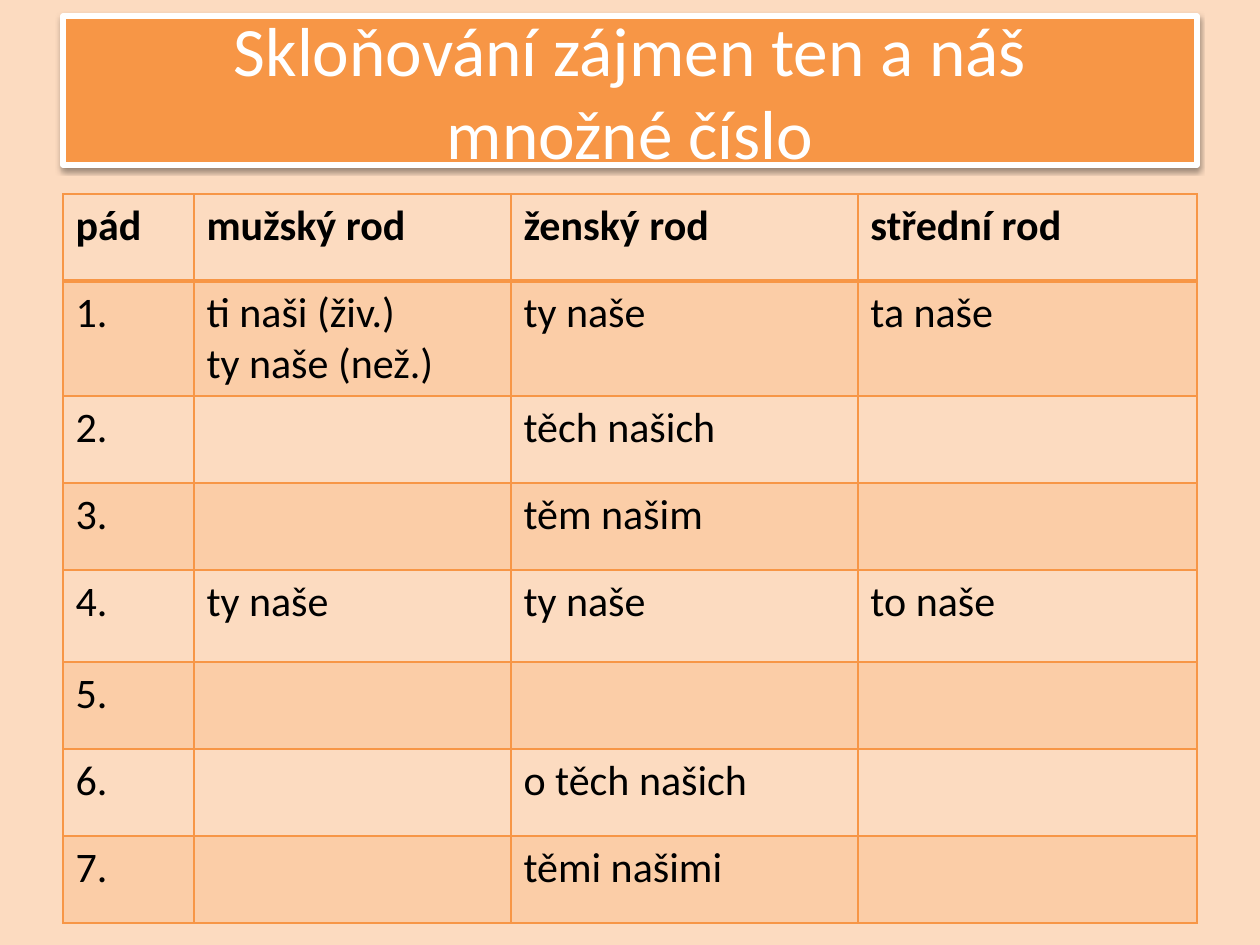
from lxml.etree import SubElement
from pptx import Presentation
from pptx.dml.color import RGBColor
from pptx.enum.text import MSO_ANCHOR, MSO_AUTO_SIZE, PP_ALIGN
from pptx.oxml.ns import qn
from pptx.util import Emu, Pt

PX = 914400 // 126
ORANGE = RGBColor(0xF7, 0x96, 0x46)
PEACH = RGBColor(0xFC, 0xDB, 0xC0)
WHITE = RGBColor(0xFF, 0xFF, 0xFF)
BLACK = RGBColor(0, 0, 0)
FONT = "Calibri"

TITLE = ["Skloňování zájmen ten a náš", "množné číslo"]
COLUMNS = [131, 317, 347, 339]
ROWS = [
    (87, ["pád", "mužský rod", "ženský rod", "střední rod"]),
    (115, ["1.", "ti naši (živ.)\nty naše (než.)", "ty naše", "ta naše"]),
    (87, ["2.", "", "těch našich", ""]),
    (87, ["3.", "", "těm našim", ""]),
    (92, ["4.", "ty naše", "ty naše", "to naše"]),
    (87, ["5.", "", "", ""]),
    (87, ["6.", "", "o těch našich", ""]),
    (87, ["7.", "", "těmi našimi", ""]),
]


def px(length):
    return Emu(length * PX)


def write(para, text, size=24, color=BLACK, bold=False, align=PP_ALIGN.LEFT):
    para.alignment = align
    span = para.add_run()
    span.text = text
    span.font.name = FONT
    span.font.size = Pt(size)
    span.font.bold = bold
    span.font.color.rgb = color


def add_color(parent, color, alpha=None):
    node = SubElement(parent, qn("a:srgbClr"), val=str(color))
    if alpha is not None:
        SubElement(node, qn("a:alpha"), val=str(alpha * 1000))


def add_shadow(shape):
    effects = SubElement(shape._element.spPr, qn("a:effectLst"))
    shadow = SubElement(effects, qn("a:outerShdw"), blurRad=str(Pt(3.1)),
                        dist=str(Pt(1.6)), dir="5400000", rotWithShape="0")
    add_color(shadow, BLACK, 38)


def add_borders(cell, **widths):
    properties = cell._tc.get_or_add_tcPr()
    for side in "LRTB":
        line = SubElement(properties, qn(f"a:ln{side}"), w=str(Pt(widths.get(side, 1))))
        add_color(SubElement(line, qn("a:solidFill")), ORANGE)


def fill_cell(cell, banded):
    if banded:
        fill = SubElement(cell._tc.get_or_add_tcPr(), qn("a:solidFill"))
        add_color(fill, ORANGE, 20)
    else:
        cell.fill.background()


def place_title(page, left, top, width, height):
    box = page.shapes.title
    box.left, box.top, box.width, box.height = map(px, (left, top, width, height))
    box.fill.solid()
    box.fill.fore_color.rgb = ORANGE
    box.line.color.rgb = WHITE
    box.line.width = Pt(3)
    add_shadow(box)
    frame = box.text_frame
    frame.auto_size = MSO_AUTO_SIZE.NONE
    frame.word_wrap = True
    frame.vertical_anchor = MSO_ANCHOR.MIDDLE
    frame.margin_top = frame.margin_bottom = 0
    para = frame.paragraphs[0]
    for number, line in enumerate(TITLE):
        if number:
            para.add_line_break()
        write(para, line, size=39.6, color=WHITE, align=PP_ALIGN.CENTER)


def place_table(page, left, top):
    width, height = sum(COLUMNS), sum(tall for tall, _ in ROWS)
    table = page.shapes.add_table(len(ROWS), len(COLUMNS), px(left), px(top),
                                  px(width), px(height)).table
    table.horz_banding = False
    for column, wide in zip(table.columns, COLUMNS):
        column.width = px(wide)
    for index, (tall, texts) in enumerate(ROWS):
        table.rows[index].height = px(tall)
        for place, text in enumerate(texts):
            cell = table.cell(index, place)
            add_borders(cell, T=2 if index == 1 else 1, B=2 if index == 0 else 1)
            fill_cell(cell, banded=index % 2 == 1)
            if not text:
                continue
            frame = cell.text_frame
            for number, line in enumerate(text.split("\n")):
                para = frame.add_paragraph() if number else frame.paragraphs[0]
                write(para, line, bold=index == 0)


def main():
    deck = Presentation()
    deck.slide_width, deck.slide_height = px(1260), px(945)
    page = deck.slides.add_slide(deck.slide_layouts[5])
    page.background.fill.solid()
    page.background.fill.fore_color.rgb = PEACH
    place_title(page, 63, 16, 1134, 149)
    place_table(page, 63, 194)
    deck.save("out.pptx")


if __name__ == "__main__":
    main()
